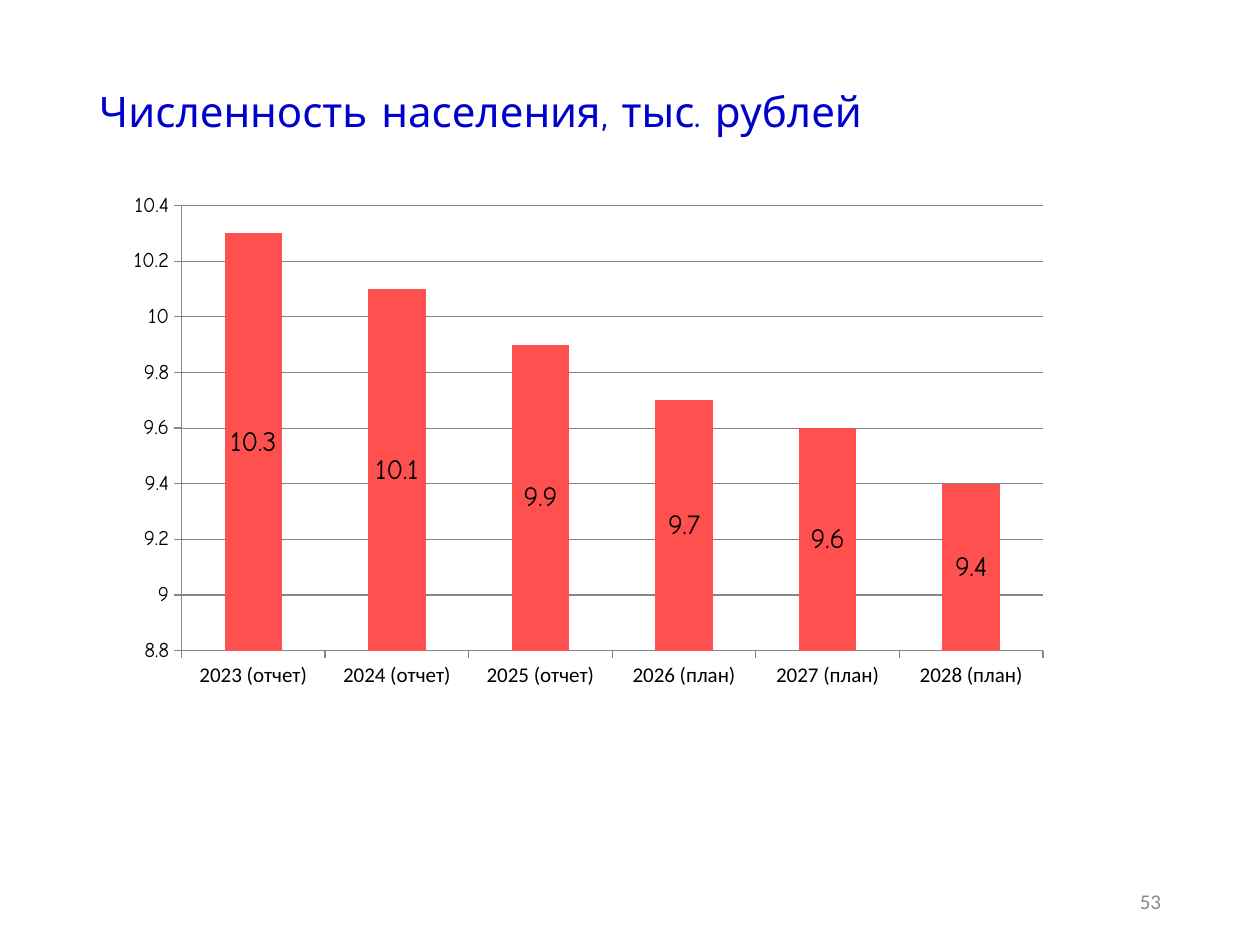
from lxml import etree
from pptx import Presentation
from pptx import util as u
from pptx.chart.data import CategoryChartData
from pptx.dml.color import RGBColor
from pptx.enum import chart as ch, text
from pptx.oxml.ns import qn

Pt = u.Pt

# Content
TITLE = "Численность населения, тыс. рублей"
PAGE = "53"
POPULATION = [
    ("2023 (отчет)", 10.3),
    ("2024 (отчет)", 10.1),
    ("2025 (отчет)", 9.9),
    ("2026 (план)", 9.7),
    ("2027 (план)", 9.6),
    ("2028 (план)", 9.4),
]
PLOT = {"x": 0.107, "y": 0.05, "w": 0.755, "h": 0.795}
BODY, ACCENT = "Calibri", "Comic Neue"
BLACK, BLUE, RED, GRAY, LINE = "000000", "0000CC", "FF5050", "898989", "868686"


def rgb(value):
    return RGBColor.from_string(value)


def set_font(font, size, name, color):
    font.size, font.name = Pt(size), name
    font.color.rgb = rgb(color)


def add_text(slide, box, content, size, name, color, align):
    tf = slide.shapes.add_textbox(*map(Pt, box)).text_frame
    tf.word_wrap = True
    tf.vertical_anchor = text.MSO_ANCHOR.MIDDLE
    p = tf.paragraphs[0]
    p.text, p.alignment = content, align
    set_font(p.font, size, name, color)
    return p


def set_plot_area(chart, layout):
    """Fix the inner plot area as fractions of the chart."""
    area = chart._chartSpace.find(".//" + qn("c:plotArea"))
    for old in area.findall(qn("c:layout")):
        area.remove(old)
    node = etree.Element(qn("c:layout"))
    manual = etree.SubElement(node, qn("c:manualLayout"))
    settings = [("layoutTarget", "inner"), ("xMode", "edge"), ("yMode", "edge")]
    for tag, val in settings + list(layout.items()):
        etree.SubElement(manual, qn("c:" + tag)).set("val", str(val))
    area.insert(0, node)


prs = Presentation()
prs.slide_width, prs.slide_height = Pt(720), Pt(540)
s = prs.slides.add_slide(prs.slide_layouts[6])

# Title and page number
title = add_text(s, (49.5, 28.75, 621, 72.5), TITLE, 24, ACCENT, BLUE,
                 text.PP_ALIGN.LEFT)
title.line_spacing = 0.9
add_text(s, (508.5, 500.5, 162, 28.75), PAGE, 12, BODY, GRAY, text.PP_ALIGN.RIGHT)

# Population chart
data = CategoryChartData()
data.categories = [year for year, _ in POPULATION]
data.add_series("Series 1", [value for _, value in POPULATION])
chart = s.shapes.add_chart(ch.XL_CHART_TYPE.COLUMN_STACKED, Pt(34), Pt(101.5),
                           Pt(652), Pt(320), data).chart
chart.has_title = chart.has_legend = False
set_font(chart.font, 18, BODY, BLACK)
set_plot_area(chart, PLOT)

# Columns and value labels
plot = chart.plots[0]
plot.gap_width, plot.overlap, plot.vary_by_categories = 150, 100, False
series = plot.series[0]
series.format.fill.solid()
series.format.fill.fore_color.rgb = rgb(RED)
labels = series.data_labels
labels.show_value = True
labels.position = ch.XL_LABEL_POSITION.CENTER
set_font(labels.font, 16, ACCENT, BLACK)

# Axes
values = chart.value_axis
values.minimum_scale, values.maximum_scale, values.major_unit = 8.8, 10.4, 0.2
values.has_major_gridlines = True
for axis, name in ((chart.category_axis, BODY), (values, ACCENT)):
    axis.major_tick_mark = ch.XL_TICK_MARK.OUTSIDE
    axis.minor_tick_mark = ch.XL_TICK_MARK.NONE
    set_font(axis.tick_labels.font, 12, name, BLACK)
for part in (chart.category_axis, values, values.major_gridlines):
    part.format.line.color.rgb = rgb(LINE)
    part.format.line.width = Pt(0.75)

prs.save("out.pptx")
